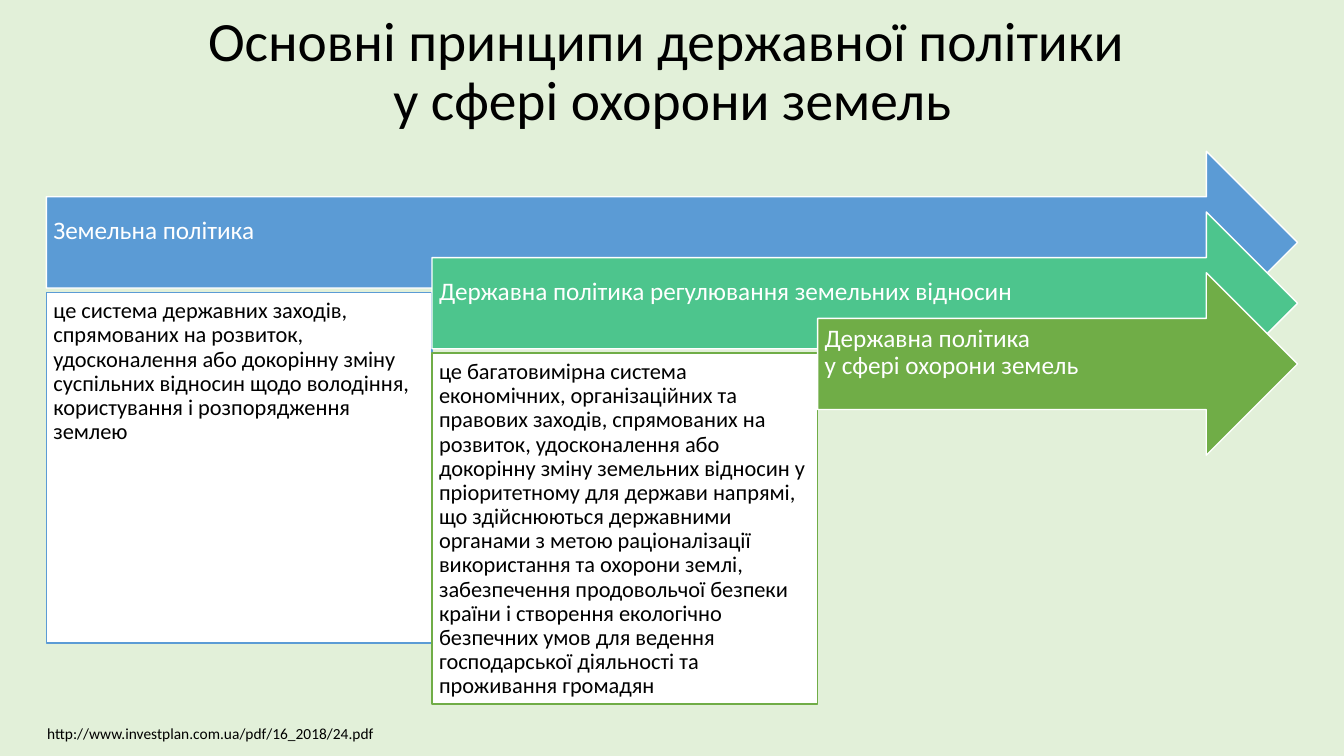
from pptx import Presentation
from pptx.dml.color import RGBColor
from pptx.enum.shapes import MSO_SHAPE
from pptx.enum.text import MSO_ANCHOR, PP_ALIGN
from pptx.util import Inches, Pt

BACKGROUND = RGBColor(0xE2, 0xF0, 0xD9)
BLUE = RGBColor(0x5B, 0x9B, 0xD5)
TEAL = RGBColor(0x4D, 0xC5, 0x8D)
GREEN = RGBColor(0x70, 0xAD, 0x47)
WHITE = RGBColor(0xFF, 0xFF, 0xFF)
BLACK = RGBColor(0, 0, 0)

# Arrow text lines, arrow colour, definition, definition border
POLICIES = [
    (["Земельна політика"], BLUE,
     "це система державних заходів, спрямованих на розвиток, удосконалення "
     "або докорінну зміну суспільних відносин щодо володіння, користування "
     "і розпорядження землею", BLUE),
    (["Державна політика регулювання земельних відносин"], TEAL,
     "це багатовимірна система економічних, організаційних та правових "
     "заходів, спрямованих на розвиток, удосконалення або докорінну зміну "
     "земельних відносин у пріоритетному для держави напрямі, що здійснюються "
     "державними органами з метою раціоналізації використання та охорони "
     "землі, забезпечення продовольчої безпеки країни і створення екологічно "
     "безпечних умов для ведення господарської діяльності та проживання "
     "громадян", GREEN),
    (["Державна політика ", "у сфері охорони земель"], GREEN, None, None),
]


def write(shape, lines, size, color, align=PP_ALIGN.LEFT,
          anchor=MSO_ANCHOR.TOP, insets=(0.1, 0.05, 0.1, 0.05), spacing=0.9):
    tf = shape.text_frame
    tf.word_wrap = True
    tf.vertical_anchor = anchor
    (tf.margin_left, tf.margin_top,
     tf.margin_right, tf.margin_bottom) = [Inches(i) for i in insets]
    p = tf.paragraphs[0]
    p.alignment = align
    p.line_spacing = spacing
    for i, line in enumerate(lines):
        if i:
            p.add_line_break()
        r = p.add_run()
        r.text = line
        r.font.name = "Calibri"
        r.font.size = Pt(size)
        r.font.color.rgb = color


def add_text(s, box, lines, size, **style):
    tb = s.shapes.add_textbox(*[Inches(v) for v in box])
    write(tb, lines, size, BLACK, **style)


def add_filled(s, kind, box, fill, border):
    sp = s.shapes.add_shape(kind, *[Inches(v) for v in box])
    sp.shadow.inherit = False
    sp.fill.solid()
    sp.fill.fore_color.rgb = fill
    sp.line.color.rgb = border
    sp.line.width = Pt(1)
    return sp


def add_policies(s, left, top, width):
    """Stepped arrows sharing one right end, with definitions below."""
    column, step, arrow_height = 3.825, 0.603, 1.81
    for i, (lines, color, definition, border) in enumerate(POLICIES):
        x, y = left + i * column, top + i * step
        arrow = add_filled(s, MSO_SHAPE.RIGHT_ARROW,
                           (x, y, width - i * column, arrow_height),
                           color, WHITE)
        write(arrow, lines, 18, WHITE, anchor=MSO_ANCHOR.MIDDLE,
              insets=(0.07, 0.07, 0.28, 0.29))
        if definition:
            panel = add_filled(s, MSO_SHAPE.RECTANGLE,
                               (x, y + 1.4, column, 3.48), WHITE, border)
            write(panel, [definition], 16, BLACK, insets=[0.07] * 4)


def main():
    prs = Presentation()
    prs.slide_width, prs.slide_height = Inches(13.33), Inches(7.5)
    s = prs.slides.add_slide(prs.slide_layouts[6])
    s.background.fill.solid()
    s.background.fill.fore_color.rgb = BACKGROUND

    # Title
    add_text(s, (0.92, 0.21, 11.5, 1.03),
             ["Основні принципи державної політики ", "у сфері охорони земель"],
             39.6, align=PP_ALIGN.CENTER, anchor=MSO_ANCHOR.MIDDLE)
    # Arrows and definitions
    add_policies(s, 0.46, 1.5, 12.41)
    # Source address
    add_text(s, (0.37, 7.13, 6.66, 0.29),
             ["http://www.investplan.com.ua/pdf/16_2018/24.pdf"], 11, spacing=1.0)
    prs.save("out.pptx")


if __name__ == "__main__":
    main()
